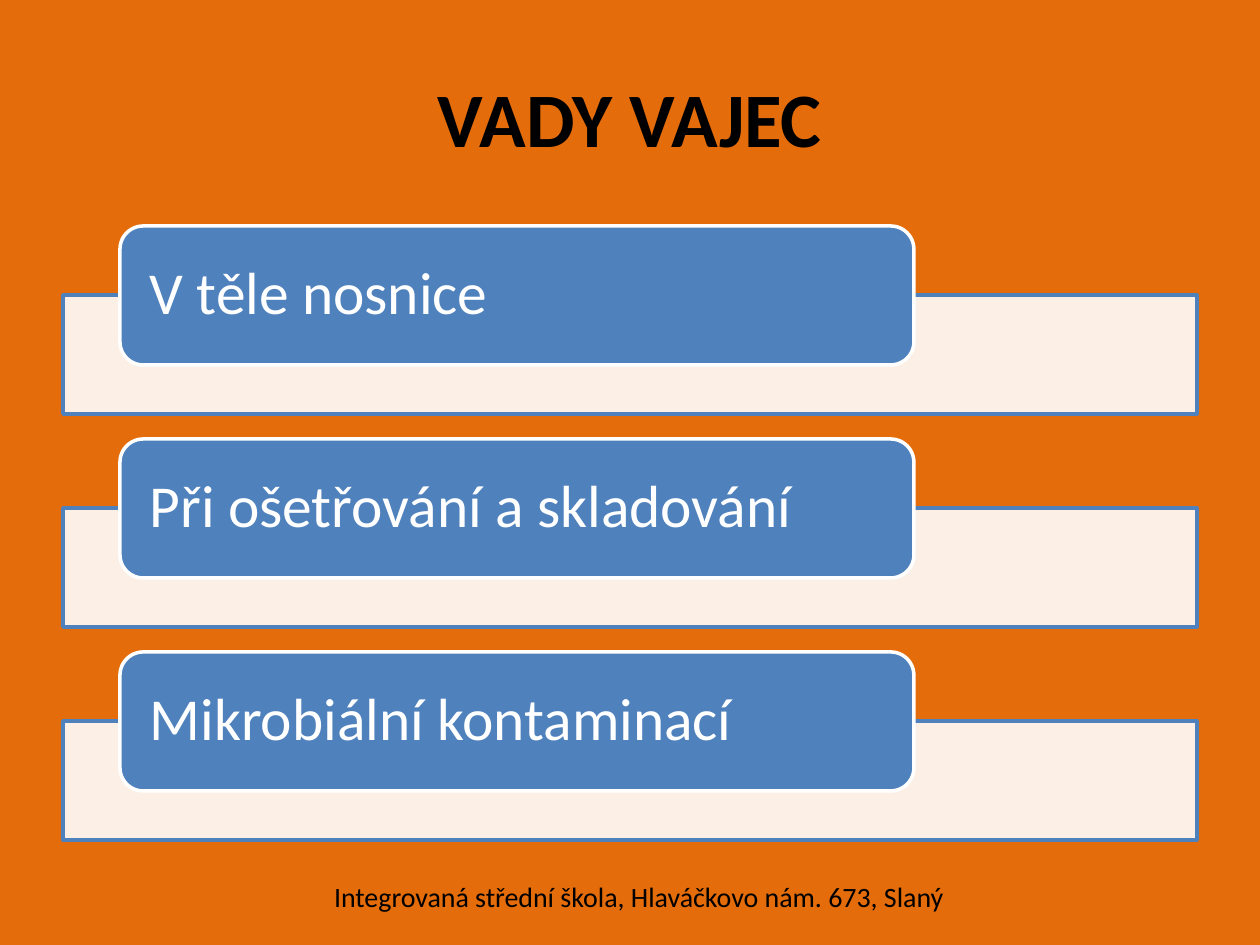
from lxml.etree import SubElement
from pptx import Presentation
from pptx.dml.color import RGBColor
from pptx.enum.shapes import MSO_SHAPE as Shape
from pptx.enum.text import MSO_ANCHOR as Anchor, PP_ALIGN as Align
from pptx.oxml.ns import qn
from pptx.util import Emu, Pt

PX_PER_INCH = 126
ORANGE = RGBColor(0xE4, 0x6C, 0x0A)
BLUE = RGBColor(0x4F, 0x81, 0xBD)
WHITE = RGBColor(0xFF, 0xFF, 0xFF)
BLACK = RGBColor(0, 0, 0)

DEFECTS = ["V těle nosnice", "Při ošetřování a skladování", "Mikrobiální kontaminací"]
ROW_TOP, ROW_PITCH, BAR_DROP = 226, 213, 69


def px(length):
    return Emu(round(length * 914400 / PX_PER_INCH))


def apply(target, values):
    for name, value in values.items():
        setattr(target, name, value)


def write_text(box, text, size, color, align, bold=False, spacing=None, margins=(0, 0)):
    side, edge = (px(margin) for margin in margins)
    frame = box.text_frame
    apply(frame, {"word_wrap": True, "margin_left": side, "margin_right": side,
                  "margin_top": edge, "margin_bottom": edge})
    para = frame.paragraphs[0]
    apply(para, {"alignment": align, "line_spacing": spacing})
    span = para.add_run()
    span.text = text
    apply(span.font, {"name": "Calibri", "size": Pt(size), "bold": bold})
    span.font.color.rgb = color


def add_panel(page, kind, bounds, fill, line, opacity=100):
    panel = page.shapes.add_shape(kind, *map(px, bounds))
    panel.shadow.inherit = False
    panel.fill.solid()
    panel.fill.fore_color.rgb = fill
    panel.line.color.rgb = line
    panel.line.width = Pt(2)
    if opacity < 100:
        color = panel.fill._xPr.find(qn("a:solidFill"))[0]
        SubElement(color, qn("a:alpha")).set("val", str(opacity * 1000))
    return panel


def add_title(page, text):
    title = page.shapes.title
    apply(title, {"left": px(63), "top": px(38), "width": px(1134), "height": px(157)})
    title.text_frame.vertical_anchor = Anchor.MIDDLE
    write_text(title, text, 44, BLACK, Align.CENTER, bold=True, margins=(12, 6))


def add_defect(page, text, top):
    add_panel(page, Shape.RECTANGLE, (63, top + BAR_DROP, 1134, 119), WHITE, BLUE, opacity=90)
    label = add_panel(page, Shape.ROUNDED_RECTANGLE, (120, top, 794, 139), BLUE, WHITE)
    label.text_frame.vertical_anchor = Anchor.MIDDLE
    write_text(label, text, 34, WHITE, Align.LEFT, spacing=0.9, margins=(23, 0))


def add_footer(page, text):
    footer = page.shapes.add_textbox(*map(px, (282, 880, 714, 65)))
    footer.text_frame.vertical_anchor = Anchor.TOP
    write_text(footer, text, 16, BLACK, Align.CENTER)


def main():
    deck = Presentation()
    apply(deck, {"slide_width": px(1260), "slide_height": px(945)})
    page = deck.slides.add_slide(deck.slide_layouts[5])
    page.background.fill.solid()
    page.background.fill.fore_color.rgb = ORANGE
    add_title(page, "VADY VAJEC")
    for row, defect in enumerate(DEFECTS):
        add_defect(page, defect, ROW_TOP + row * ROW_PITCH)
    add_footer(page, "Integrovaná střední škola, Hlaváčkovo nám. 673, Slaný")
    deck.save("out.pptx")


if __name__ == "__main__":
    main()
